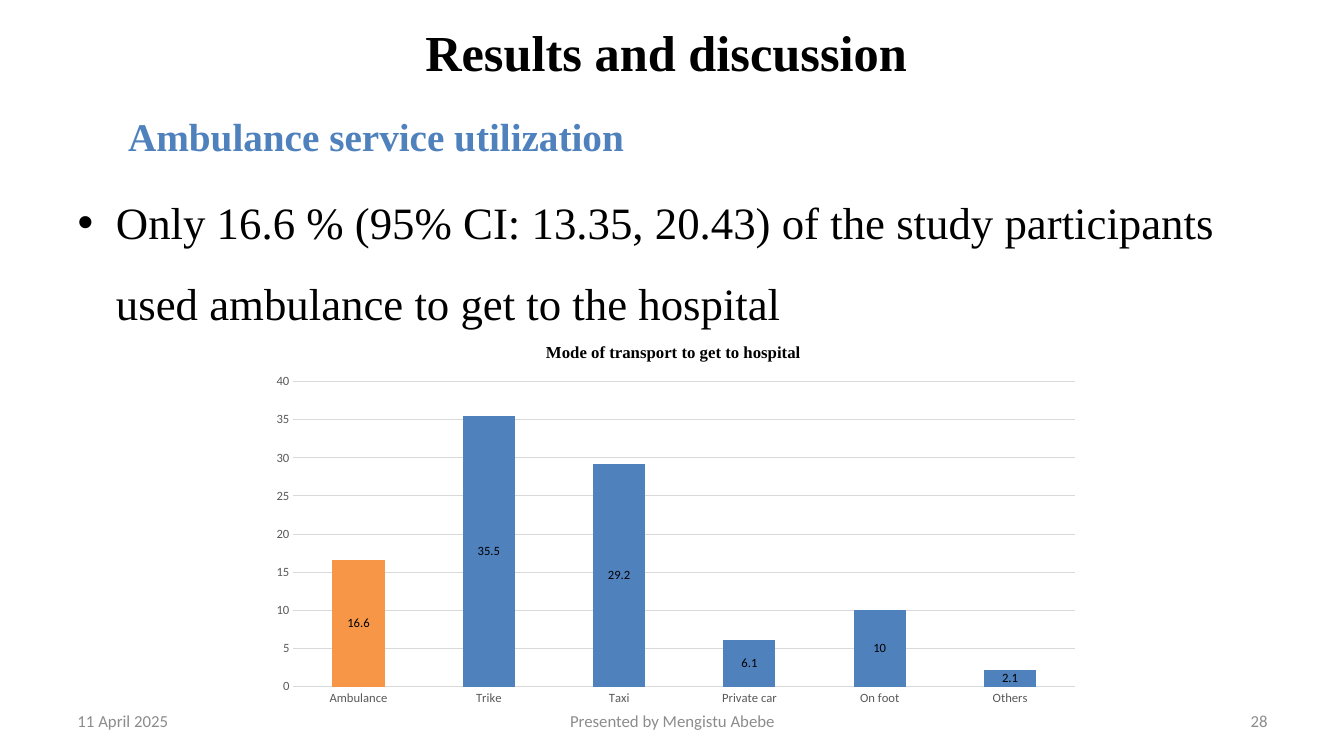
from lxml import etree
from pptx import Presentation
from pptx.chart.data import CategoryChartData
from pptx.dml.color import RGBColor
from pptx.enum.chart import XL_CHART_TYPE, XL_LABEL_POSITION, XL_TICK_MARK
from pptx.enum.text import MSO_ANCHOR, MSO_AUTO_SIZE, PP_ALIGN
from pptx.oxml.ns import qn
from pptx.util import Inches, Pt

STACKED = XL_CHART_TYPE.COLUMN_STACKED
LABEL_CENTER = XL_LABEL_POSITION.CENTER
NO_TICK = XL_TICK_MARK.NONE
MIDDLE = MSO_ANCHOR.MIDDLE
NO_FIT = MSO_AUTO_SIZE.NONE
LEFT, CENTER, RIGHT = PP_ALIGN.LEFT, PP_ALIGN.CENTER, PP_ALIGN.RIGHT

BLACK = RGBColor(0x00, 0x00, 0x00)
BLUE = RGBColor(0x4F, 0x81, 0xBD)
ORANGE = RGBColor(0xF7, 0x96, 0x46)
FOOTER_GRAY = RGBColor(0x8C, 0x8C, 0x8C)
AXIS_GRAY = RGBColor(0x59, 0x59, 0x59)
GRID_GRAY = RGBColor(0xD9, 0xD9, 0xD9)
SERIF, SANS = "Times New Roman", "Calibri"
MARGIN, CONTENT_WIDTH = 0.67, 12


def style(font, name, size, color, bold=False):
    font.name = name
    font.size = Pt(size)
    font.bold = bold
    font.color.rgb = color


def set_layout(parent, index, **shares):
    for old in parent.findall(qn("c:layout")):
        parent.remove(old)
    layout = etree.Element(qn("c:layout"))
    manual = etree.SubElement(layout, qn("c:manualLayout"))
    for tag, value in shares.items():
        etree.SubElement(manual, qn(f"c:{tag}")).set("val", str(value))
    parent.insert(index, layout)


deck = Presentation()
deck.slide_width, deck.slide_height = Inches(13.33), Inches(7.5)
page = deck.slides.add_slide(deck.slide_layouts[1])

title = page.shapes.title
title.left, title.top = Inches(MARGIN), Inches(0.17)
title.width, title.height = Inches(CONTENT_WIDTH), Inches(0.67)
title.text_frame.auto_size = NO_FIT
title.text_frame.vertical_anchor = MIDDLE
para = title.text_frame.paragraphs[0]
para.alignment = CENTER
span = para.add_run()
span.text = "Results and discussion "
style(span.font, SERIF, 36, BLACK, True)

body = page.placeholders[1]
body.left, body.top = Inches(MARGIN), Inches(0.83)
body.width, body.height = Inches(CONTENT_WIDTH), Inches(5.87)
frame = body.text_frame
frame.auto_size = NO_FIT
heading = frame.paragraphs[0]
heading.level = 1
finding = frame.add_paragraph()
for para, text, size, color, bold, margin, indent in (
    (heading, "Ambulance service utilization", 28, BLUE, True, 0.5, 0),
    (finding, "Only 16.6 % (95% CI: 13.35, 20.43) of the study participants "
     "used ambulance to get to the hospital", 32, BLACK, False, 0.38, -0.38),
):
    para.line_spacing = 1.5
    span = para.add_run()
    span.text = text
    style(span.font, SERIF, size, color, bold)
    properties = para._p.get_or_add_pPr()
    properties.set("marL", str(Inches(margin)))
    properties.set("indent", str(Inches(indent)))
etree.SubElement(heading._p.get_or_add_pPr(), qn("a:buNone"))
etree.SubElement(finding._p.get_or_add_pPr(), qn("a:buChar")).set("char", "•")

for text, left, width, alignment in (
    ("11 April 2025", MARGIN, 3.11, LEFT),
    ("Presented by Mengistu Abebe", 4.56, 4.22, CENTER),
    ("28", 9.56, 3.11, RIGHT),
):
    box = page.shapes.add_textbox(Inches(left), Inches(6.95), Inches(width), Inches(0.4))
    box.text_frame.word_wrap = True
    box.text_frame.vertical_anchor = MIDDLE
    para = box.text_frame.paragraphs[0]
    para.alignment = alignment
    span = para.add_run()
    span.text = text
    style(span.font, SANS, 12, FOOTER_GRAY)

transport = CategoryChartData()
transport.categories = ["Ambulance", "Trike", "Taxi", "Private car", "On foot", "Others"]
transport.add_series("Series 1", (16.6, 35.5, 29.2, 6.1, 10, 2.1))
chart = page.shapes.add_chart(
    STACKED, Inches(2.58), Inches(3.25), Inches(8.25), Inches(3.83), transport
).chart
style(chart.font, SANS, 10, BLACK)
chart.has_legend = False
chart.has_title = True
span = chart.chart_title.text_frame.paragraphs[0].add_run()
span.text = "Mode of transport to get to hospital"
style(span.font, SERIF, 12, BLACK, True)
set_layout(chart.element.find(".//" + qn("c:title")), 1,
           xMode="edge", yMode="edge", x=0.34, y=0.03)
set_layout(chart.element.find(".//" + qn("c:plotArea")), 0,
           layoutTarget="inner", xMode="edge", yMode="edge",
           x=0.04, y=0.14, w=0.94, h=0.79)

for axis in (chart.category_axis, chart.value_axis):
    axis.major_tick_mark = NO_TICK
    axis.minor_tick_mark = NO_TICK
    axis.format.line.fill.background()
    style(axis.tick_labels.font, SANS, 9, AXIS_GRAY)
chart.value_axis.minimum_scale = 0
chart.value_axis.maximum_scale = 40
chart.value_axis.major_unit = 5
grid_line = chart.value_axis.major_gridlines.format.line
grid_line.color.rgb = GRID_GRAY
grid_line.width = Pt(0.75)

plot = chart.plots[0]
plot.vary_by_categories = False
plot.gap_width = 150
plot.overlap = 100
modes = plot.series[0]
for bar, color in ((modes, BLUE), (modes.points[0], ORANGE)):
    bar.format.fill.solid()
    bar.format.fill.fore_color.rgb = color
labels = modes.data_labels
labels.show_value = True
labels.position = LABEL_CENTER
style(labels.font, SANS, 9, BLACK)

deck.save("out.pptx")
